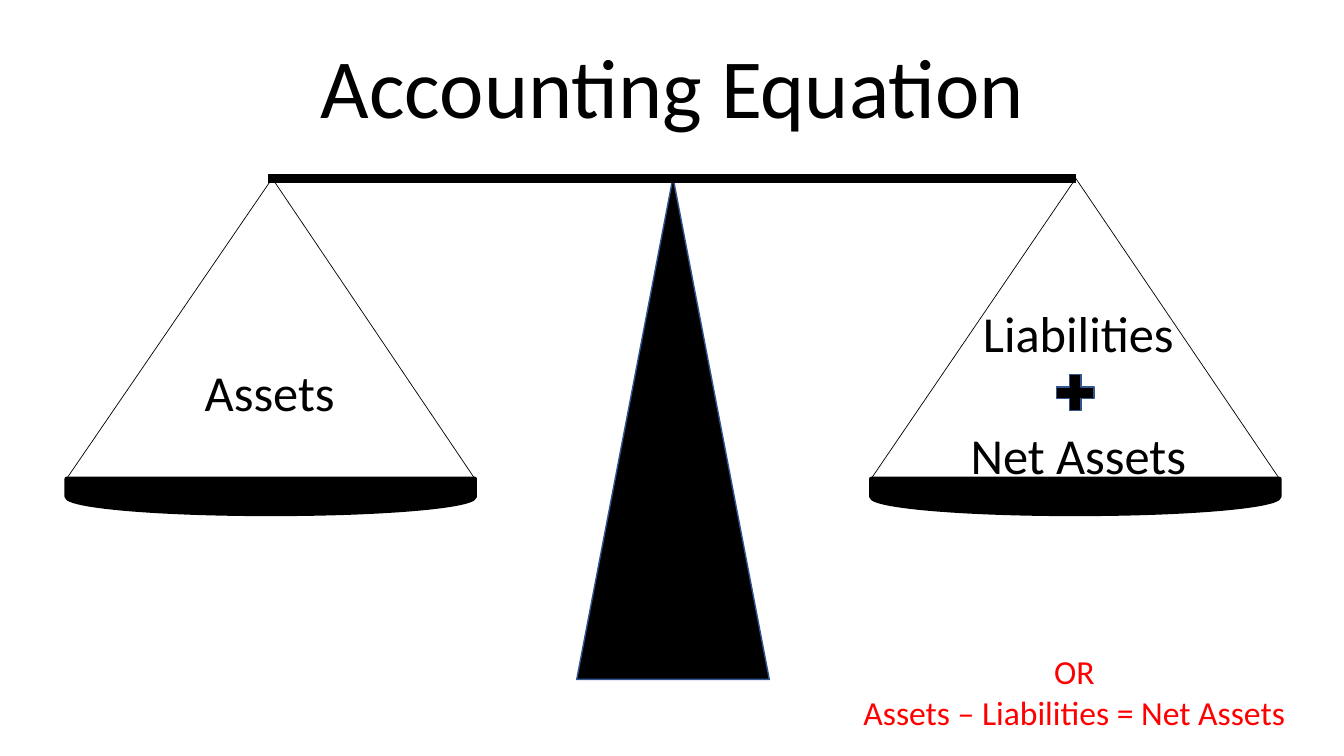
import pptx
import pptx.util
import pptx.dml.color
import pptx.enum.shapes
import pptx.enum.text
import pptx.oxml.ns
import lxml.etree

Inches = pptx.util.Inches
Pt = pptx.util.Pt
KIND = pptx.enum.shapes.MSO_SHAPE
BLACK = pptx.dml.color.RGBColor(0, 0, 0)
BLUE = pptx.dml.color.RGBColor(0x32, 0x54, 0x91)
RED = pptx.dml.color.RGBColor(0xFF, 0, 0)

deck = pptx.Presentation()
deck.slide_width = Inches(13.33)
deck.slide_height = Inches(7.5)
slide = deck.slides.add_slide(deck.slide_layouts[5])
shapes = slide.shapes


def format_text(frame, size, color):
    frame.word_wrap = True
    for para in frame.paragraphs:
        para.alignment = pptx.enum.text.PP_ALIGN.CENTER
        for run in para.runs:
            run.font.name = "Calibri"
            run.font.size = Pt(size)
            run.font.color.rgb = color


title = shapes.title
title.left, title.top = Inches(0.92), Inches(0.4)
title.width, title.height = Inches(11.5), Inches(1.01)
title.text_frame.text = "Accounting Equation"
title.text_frame.vertical_anchor = pptx.enum.text.MSO_ANCHOR.MIDDLE
title.text_frame.paragraphs[0].line_spacing = 0.9
format_text(title.text_frame, 60, BLACK)

solids = [
    (KIND.ISOSCELES_TRIANGLE, 5.72, 1.76, 1.91, 4.98, 0, BLUE, 1),
    (KIND.FLOWCHART_DELAY, 2.51, 2.9, 0.35, 4.05, 90, BLACK, 3),
    (KIND.FLOWCHART_DELAY, 10.49, 2.9, 0.35, 4.05, 90, BLACK, 3),
    (KIND.MATH_PLUS, 10.41, 3.65, 0.51, 0.49, 0, BLUE, 1),
]
for kind, left, top, width, height, turn, edge, weight in solids:
    solid = shapes.add_shape(kind, Inches(left), Inches(top), Inches(width), Inches(height))
    solid.rotation = turn
    solid.shadow.inherit = False
    solid.fill.solid()
    solid.fill.fore_color.rgb = BLACK
    solid.line.color.rgb = edge
    solid.line.width = Pt(weight)

lines = [(2.66, 10.67, 1.77, 6)]
for hook, ends in [(2.7, (0.66, 4.71)), (10.67, (8.64, 12.69))]:
    for end in ends:
        lines.append((hook, end, 4.75, 0.5))
for start, end, low, weight in lines:
    line = shapes.add_connector(
        pptx.enum.shapes.MSO_CONNECTOR.STRAIGHT,
        Inches(start), Inches(1.77), Inches(end), Inches(low))
    line.line.color.rgb = BLACK
    line.line.width = Pt(weight)
    lxml.etree.SubElement(line._element.spPr, pptx.oxml.ns.qn("a:effectLst"))

labels = [
    ("Assets", 1.71, 3.53, 1.93, 0.71, 36, BLACK, 0),
    ("Liabilities\nNet Assets", 9.27, 2.95, 2.85, 1.99, 36, BLACK, 44),
    ("OR\nAssets – Liabilities = Net Assets", 8.3, 6.41, 4.71, 0.91, 24, RED, 0),
]
for text, left, top, width, height, size, color, gap in labels:
    box = shapes.add_textbox(Inches(left), Inches(top), Inches(width), Inches(height))
    box.text_frame.text = text
    box.text_frame.paragraphs[-1].space_before = Pt(gap)
    format_text(box.text_frame, size, color)

deck.save("out.pptx")
